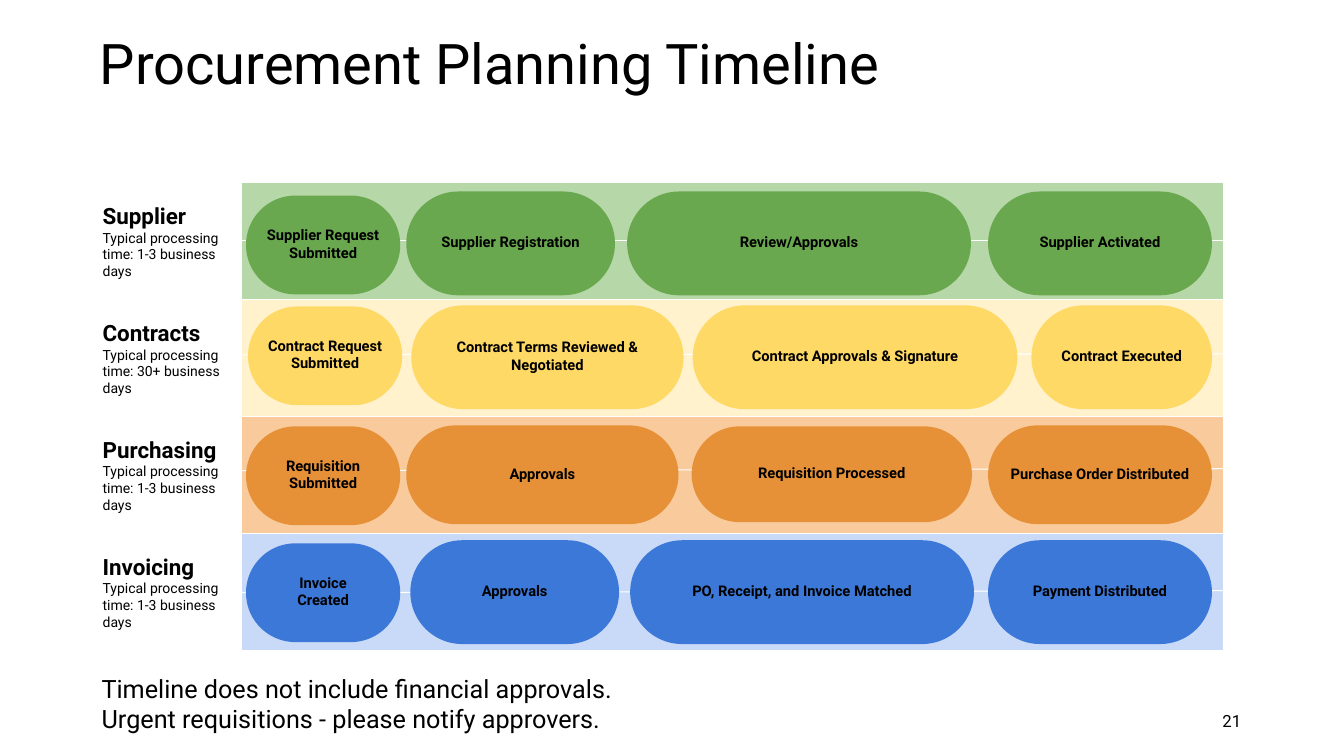
from dataclasses import dataclass

from lxml import etree
from pptx import Presentation
from pptx.dml.color import RGBColor
from pptx.enum.shapes import MSO_CONNECTOR, MSO_SHAPE
from pptx.enum.text import MSO_ANCHOR as ANCHOR, MSO_AUTO_SIZE, PP_ALIGN as ALIGN
from pptx.oxml.ns import qn
from pptx.util import Inches, Pt


@dataclass(frozen=True)
class Theme:
    font: str = "Roboto"
    ink: str = "000000"
    rule: str = "FFFFFF"
    rule_width: float = 0.75
    title: float = 40
    note: float = 18
    heading: float = 16
    number: float = 12
    step: float = 10.5
    detail: float = 10


@dataclass(frozen=True)
class Step:
    text: str
    left: float
    top: float
    width: float
    height: float = 1.03


@dataclass(frozen=True)
class Stage:
    name: str
    duration: str
    band: str
    pill: str
    track_start: float
    track_end: float
    steps: tuple


THEME = Theme()
ROW_HEIGHT = 1.16
LABEL_WIDTH = 1.47

STAGES = (
    Stage("Supplier", "1-3", "B6D7A8", "6AA84F", 0.58, 0.58, (
        Step("Supplier Request Submitted", 0.05, 0.13, 1.53, 0.98),
        Step("Supplier Registration", 1.64, 0.09, 2.07),
        Step("Review/Approvals", 3.83, 0.09, 3.41),
        Step("Supplier Activated", 7.41, 0.09, 2.22))),
    Stage("Contracts", "30+", "FFF2CC", "FFD966", 0.55, 0.54, (
        Step("Contract Request Submitted", 0.07, 0.07, 1.53, 0.98),
        Step("Contract Terms Reviewed & Negotiated", 1.69, 0.06, 2.7),
        Step("Contract Approvals & Signature", 4.48, 0.06, 3.22),
        Step("Contract Executed", 7.84, 0.06, 1.79))),
    Stage("Purchasing", "1-3", "F9CB9C", "E69138", 0.54, 0.52, (
        Step("Requisition Submitted", 0.05, 0.1, 1.53, 0.98),
        Step("Approvals", 1.64, 0.09, 2.7, 0.98),
        Step("Requisition Processed", 4.47, 0.1, 2.78, 0.95),
        Step("Purchase Order Distributed", 7.41, 0.09, 2.22, 0.98))),
    Stage("Invoicing", "1-3", "C9DAF8", "3C78D8", 0.59, 0.57, (
        Step("Invoice\nCreated", 0.05, 0.1, 1.53, 0.98),
        Step("Approvals", 1.68, 0.07, 2.07),
        Step("PO, Receipt, and Invoice Matched", 3.86, 0.07, 3.41),
        Step("Payment Distributed", 7.41, 0.07, 2.22))),
)


def color(value):
    return RGBColor.from_string(value)


def format_paragraph(paragraph, size, bold=False, align=ALIGN.LEFT):
    paragraph.alignment = align
    font = paragraph.font
    font.name, font.size, font.bold = THEME.font, Pt(size), bold
    font.color.rgb = color(THEME.ink)


def set_insets(frame, horizontal, top, bottom):
    frame.margin_left = frame.margin_right = Inches(horizontal)
    frame.margin_top, frame.margin_bottom = Inches(top), Inches(bottom)


def add_text(slide, box, text, size, anchor=ANCHOR.TOP, align=ALIGN.LEFT):
    frame = slide.shapes.add_textbox(*map(Inches, box)).text_frame
    frame.word_wrap = True
    frame.vertical_anchor = anchor
    frame.text = text
    for paragraph in frame.paragraphs:
        format_paragraph(paragraph, size, align=align)
    return frame


def add_filled(slide, kind, box, fill):
    shape = slide.shapes.add_shape(kind, *map(Inches, box))
    shape.shadow.inherit = False
    shape.fill.solid()
    shape.fill.fore_color.rgb = color(fill)
    return shape


def format_rule(line):
    line.color.rgb = color(THEME.rule)
    line.width = Pt(THEME.rule_width)


def add_title(slide, box, text):
    title = slide.shapes.title
    title.left, title.top, title.width, title.height = map(Inches, box)
    frame = title.text_frame
    frame.text = text
    frame.word_wrap = True
    frame.auto_size = MSO_AUTO_SIZE.NONE
    frame.vertical_anchor = ANCHOR.MIDDLE
    paragraph = frame.paragraphs[0]
    paragraph.line_spacing = 0.9
    format_paragraph(paragraph, THEME.title)


def add_label(slide, box, stage):
    text = f"{stage.name}\nTypical processing time: {stage.duration} business days"
    frame = add_text(slide, box, text, THEME.detail, ANCHOR.MIDDLE)
    set_insets(frame, 0.1, 0.1, 0.1)
    format_paragraph(frame.paragraphs[0], THEME.heading, bold=True)


def add_band(slide, box, stage):
    left, top, width, height = box
    band = add_filled(slide, MSO_SHAPE.RECTANGLE, box, stage.band)
    format_rule(band.line)
    ends = (left, top + stage.track_start, left + width, top + stage.track_end)
    track = slide.shapes.add_connector(MSO_CONNECTOR.STRAIGHT, *map(Inches, ends))
    if stage.track_start == stage.track_end == height / 2:
        track.begin_connect(band, 1)
        track.end_connect(band, 3)
    format_rule(track.line)
    etree.SubElement(track._element.spPr, qn("a:effectLst"))


def add_pill(slide, box, text, fill):
    pill = add_filled(slide, MSO_SHAPE.ROUNDED_RECTANGLE, box, fill)
    pill.adjustments[0] = 0.5
    pill.line.fill.background()
    frame = pill.text_frame
    frame.word_wrap = True
    frame.vertical_anchor = ANCHOR.MIDDLE
    set_insets(frame, 0.02, 0, 0.03)
    frame.text = text
    for paragraph in frame.paragraphs:
        format_paragraph(paragraph, THEME.step, bold=True, align=ALIGN.CENTER)


def add_stage(slide, box, stage):
    left, top, width, height = box
    band_left = left + LABEL_WIDTH
    add_label(slide, (left, top, LABEL_WIDTH, height), stage)
    add_band(slide, (band_left, top, width - LABEL_WIDTH, height), stage)
    for step in stage.steps:
        step_box = (band_left + step.left, top + step.top, step.width, step.height)
        add_pill(slide, step_box, step.text, stage.pill)


def add_timeline(slide, left, top, width):
    for row, stage in enumerate(STAGES):
        add_stage(slide, (left, top + row * ROW_HEIGHT, width, ROW_HEIGHT), stage)


def main():
    presentation = Presentation()
    presentation.slide_width, presentation.slide_height = Inches(13.33), Inches(7.5)
    slide = presentation.slides.add_slide(presentation.slide_layouts[5])
    add_title(slide, (0.89, 0.07, 11.49, 1.18), "Procurement Planning Timeline")
    add_timeline(slide, 0.92, 1.81, 11.22)
    add_text(slide, (0.91, 6.63, 11.03, 0.71),
             "Timeline does not include financial approvals.\n"
             "Urgent requisitions - please notify approvers.", THEME.note)
    add_text(slide, (9.53, 6.95, 2.88, 0.4), "21", THEME.number,
             ANCHOR.MIDDLE, ALIGN.RIGHT).paragraphs[0].space_after = Pt(6)
    presentation.save("out.pptx")


if __name__ == "__main__":
    main()
